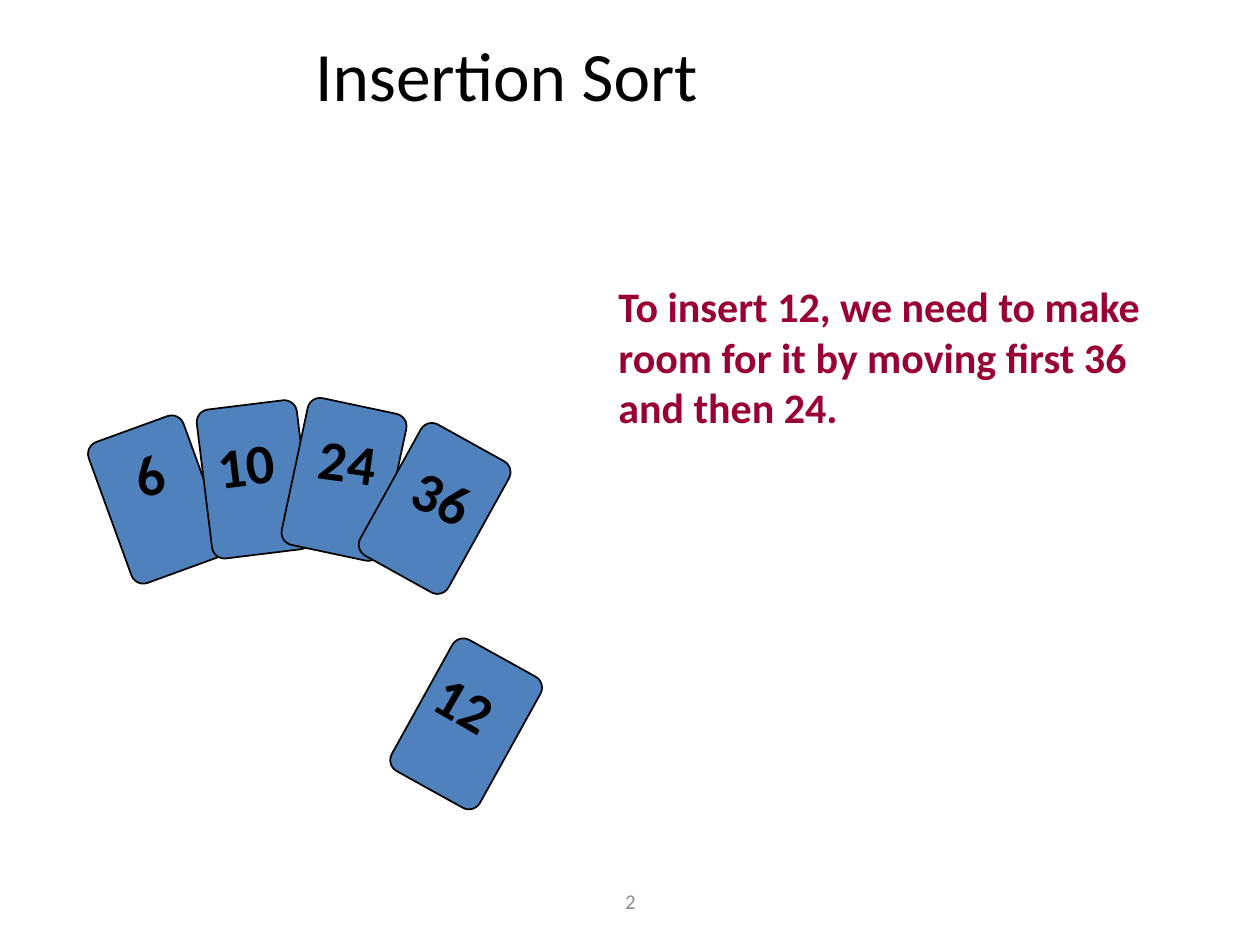
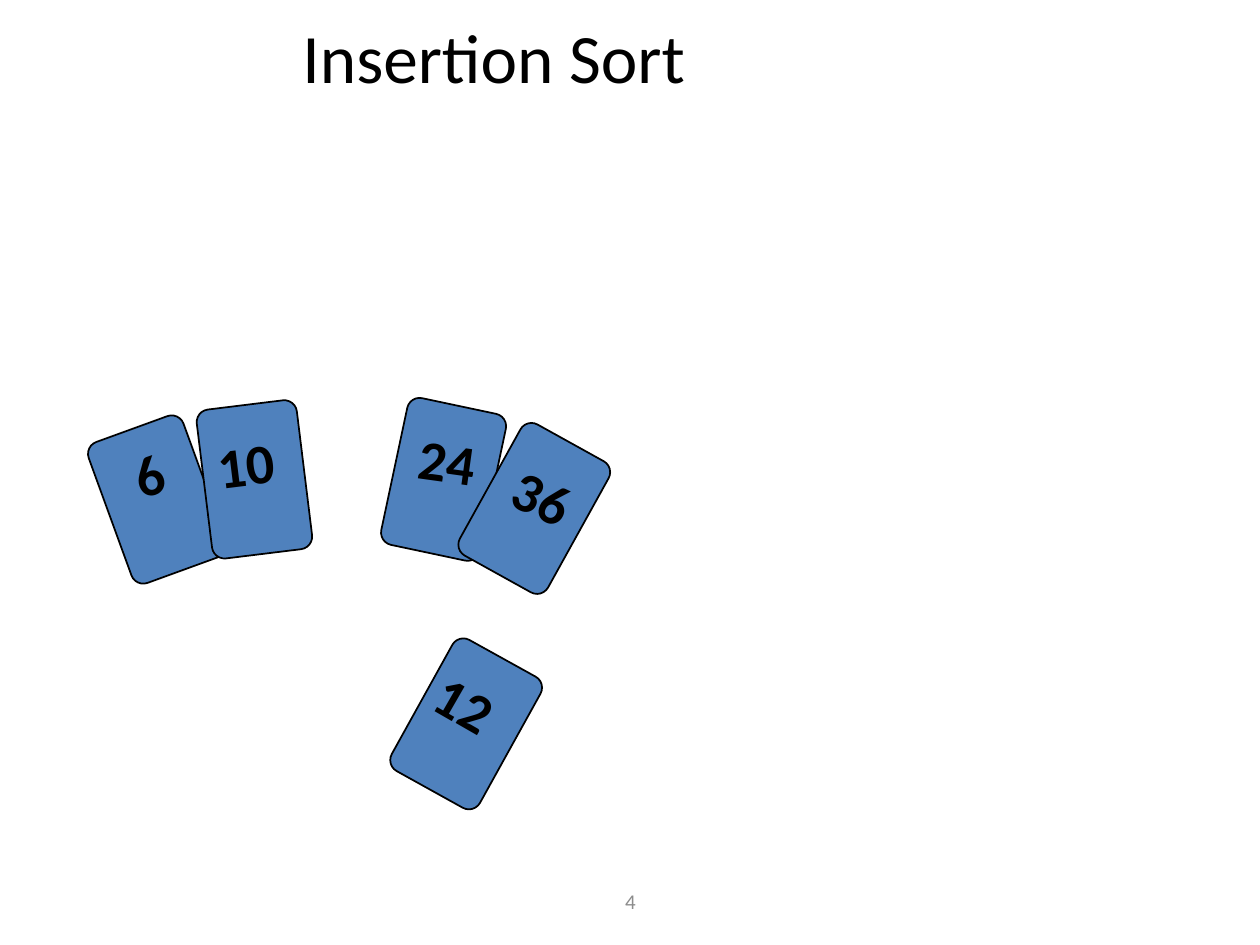
"""Build two slides showing how insertion sort makes room for a card."""
from pptx import Presentation
from pptx.dml.color import RGBColor
from pptx.enum.shapes import MSO_SHAPE
from pptx.enum.text import MSO_ANCHOR, MSO_AUTO_SIZE, PP_ALIGN
from pptx.util import Pt

CARD_SIZE = (57.6, 85.7)
LABEL_HEIGHT = 45.4
TITLE = {"size": Pt(39.6), "name": "Calibri", "bold": False}
NOTE = {"size": Pt(24), "name": "Calibri", "bold": True}
CARD_LABEL = {"size": Pt(32), "name": "Calibri", "bold": True}
PAGE_NUMBER = {"size": Pt(12), "name": "Calibri", "bold": False}
FIXED_CENTER = {"auto_size": MSO_AUTO_SIZE.NONE, "word_wrap": True}
GROWING_NOTE = {"auto_size": MSO_AUTO_SIZE.SHAPE_TO_FIT_TEXT, "word_wrap": True}
GROWING_LABEL = {"auto_size": MSO_AUTO_SIZE.SHAPE_TO_FIT_TEXT, "word_wrap": False}


def color(hex_value):
    return RGBColor.from_string(hex_value)


def add_text(slide, text, box, font_format, frame_format, hex_value="000000",
             alignment=PP_ALIGN.LEFT, anchor=MSO_ANCHOR.TOP):
    shape = slide.shapes.add_textbox(*map(Pt, box))
    frame = shape.text_frame
    for name, value in frame_format.items():
        setattr(frame, name, value)
    frame.vertical_anchor = anchor
    paragraph = frame.paragraphs[0]
    paragraph.alignment = alignment
    run = paragraph.add_run()
    run.text = text
    for name, value in font_format.items():
        setattr(run.font, name, value)
    run.font.color.rgb = color(hex_value)
    return shape


# Each card: value, card corner, card angle, label corner, label width, label angle
CARDS = [
    ("6", (61.2, 242.6), 340, (69.8, 247.7), 32.4, 341),
    ("10", (116.6, 231.1), 353, (117.4, 241.9), 50.4, 353),
    ("24", (167.8, 231.1), 12, (175.7, 240.5), 50.4, 8),
    ("36", (219.6, 247.7), 29, (229.7, 261.4), 50.4, 25),
    ("12", (237.6, 370.8), 29, (242.6, 380.2), 50.4, 30),
]
SLIDES = [
    {"number": "2", "title_box": (40.3, 49, 498.2, 20.2), "shifts": {},
     "note": "To insert 12, we need to make room for it by moving first 36 and then 24."},
    {"number": "4", "title_box": (26.6, 18, 511.2, 41), "shifts": {"24": 56.9, "36": 56.9},
     "note": None},
]

presentation = Presentation()
presentation.slide_width = Pt(720)
presentation.slide_height = Pt(540)

for content in SLIDES:
    slide = presentation.slides.add_slide(presentation.slide_layouts[6])
    add_text(slide, content["number"], (246.2, 500.4, 228.2, 28.8), PAGE_NUMBER,
             FIXED_CENTER, "8C8C8C", PP_ALIGN.CENTER, MSO_ANCHOR.MIDDLE)
    if content["note"]:
        add_text(slide, content["note"], (346.3, 157, 335.5, 93.6), NOTE, GROWING_NOTE, "990033")
    add_text(slide, "Insertion Sort", content["title_box"], TITLE, FIXED_CENTER,
             alignment=PP_ALIGN.CENTER, anchor=MSO_ANCHOR.BOTTOM)

    for value, card_corner, card_angle, label_corner, label_width, label_angle in CARDS:
        shift = content["shifts"].get(value, 0)
        card_box = (card_corner[0] + shift, card_corner[1], *CARD_SIZE)
        card = slide.shapes.add_shape(MSO_SHAPE.ROUNDED_RECTANGLE, *map(Pt, card_box))
        card.adjustments[0] = 0.125
        card.rotation = card_angle
        card.shadow.inherit = False
        card.fill.solid()
        card.fill.fore_color.rgb = color("4F81BD")
        card.line.color.rgb = color("000000")
        card.line.width = Pt(1)
        label_box = (label_corner[0] + shift, label_corner[1], label_width, LABEL_HEIGHT)
        label = add_text(slide, value, label_box, CARD_LABEL, GROWING_LABEL)
        label.rotation = label_angle

presentation.save("out.pptx")
